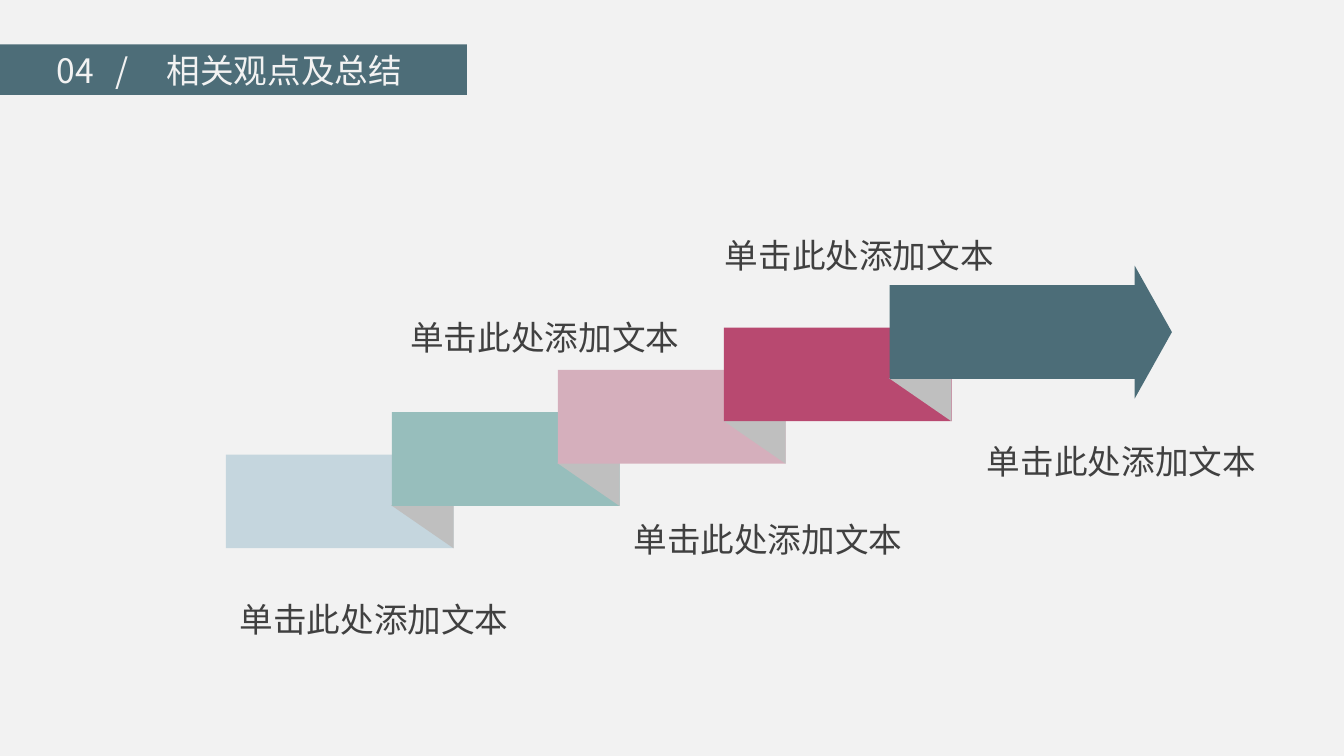
import pptx
import pptx.util
import pptx.dml.color
import pptx.enum.shapes
import pptx.enum.text
import pptx.oxml
import pptx.oxml.ns
from lxml import etree

THEME = {
    "background": "F2F2F2", "banner": "4D6D78", "text": "404040",
    "fold": "BFBFBF", "arrow": "4C6D78",
    "steps": ["C5D6DE", "97BEBC", "D5AFBC", "B84970"],
    "font": "Noto Sans CJK SC", "size": 24,
}
SHAPE = pptx.enum.shapes.MSO_SHAPE
qn = pptx.oxml.ns.qn

prs = pptx.Presentation()
prs.slide_width = pptx.util.Inches(13.33)
prs.slide_height = pptx.util.Inches(7.5)
COL, ROW = prs.slide_width / 100, prs.slide_height / 100  # 100 by 100 grid
s = prs.slides.add_slide(prs.slide_layouts[6])
s.background.fill.solid()
s.background.fill.fore_color.rgb = pptx.dml.color.RGBColor.from_string(THEME["background"])


def paint(sp, color):
    sp.shadow.inherit = False
    sp.fill.solid()
    sp.fill.fore_color.rgb = pptx.dml.color.RGBColor.from_string(color)
    sp.line.fill.background()


def write(sp, text, color):
    tf = sp.text_frame
    tf.vertical_anchor = pptx.enum.text.MSO_ANCHOR.MIDDLE
    p = tf.paragraphs[0]
    p.text = text
    p.alignment = pptx.enum.text.PP_ALIGN.LEFT
    p.font.size = pptx.util.Pt(THEME["size"])
    p.font.name = THEME["font"]
    p.font.color.rgb = pptx.dml.color.RGBColor.from_string(color)
    # East Asian glyphs take the same font
    east = etree.SubElement(p._p.pPr.find(qn("a:defRPr")), qn("a:ea"))
    east.set("typeface", THEME["font"])
    return p


# Staircase of folded ribbons, each one column step right and one row step up
LEFT, TOP, STEP_X, STEP_Y = 16.8, 60.13, 12.35, 5.6
WIDTH, HEIGHT, FOLD_W, FOLD_H = 16.95, 12.4, 4.65, 5.7
for i, color in enumerate(THEME["steps"]):
    x, y = LEFT + i * STEP_X, TOP - i * STEP_Y
    ribbon = s.shapes.add_shape(SHAPE.RECTANGLE, int(x * COL), int(y * ROW),
                                int(WIDTH * COL), int(HEIGHT * ROW))
    paint(ribbon, color)
    right, bottom = x + WIDTH, y + HEIGHT
    fb = s.shapes.build_freeform(int((right - FOLD_W) * COL), int((bottom - FOLD_H) * ROW))
    fb.add_line_segments([(int(right * COL), int((bottom - FOLD_H) * ROW)),
                          (int(right * COL), int(bottom * ROW))], close=True)
    paint(fb.convert_to_shape(), THEME["fold"])

# Arrow that ends the staircase, its shaft as high as a ribbon
ARROW_H = 17.6
steps = len(THEME["steps"])
arrow = s.shapes.add_shape(
    SHAPE.RIGHT_ARROW, int((LEFT + steps * STEP_X) * COL),
    int((TOP - steps * STEP_Y - (ARROW_H - HEIGHT) / 2) * ROW), int(21 * COL), int(ARROW_H * ROW))
arrow.adjustments[0] = HEIGHT / ARROW_H
arrow.adjustments[1] = 0.28
paint(arrow, THEME["arrow"])

# Labels around the staircase
for x, y in [(17.1, 78.5), (46.4, 68), (72.7, 57.6), (53.2, 30.4), (29.8, 41.2)]:
    label = s.shapes.add_textbox(int(x * COL), int(y * ROW), int(21.5 * COL), int(6.7 * ROW))
    label.text_frame.word_wrap = False
    write(label, "单击此处添加文本", THEME["text"])

# Title banner, with tab stops between number, slash and title
banner = s.shapes.add_shape(SHAPE.RECTANGLE, 0, int(5.87 * ROW), int(34.75 * COL), int(6.7 * ROW))
paint(banner, THEME["banner"])
banner.text_frame.margin_left = int(4.2 * COL)
p = write(banner, "04\t/\t相关观点及总结", THEME["background"])
tabs = etree.Element(qn("a:tabLst"))
for stop in (4.4, 8.2):
    etree.SubElement(tabs, qn("a:tab"), pos=str(int(stop * COL)), algn="l")
p._p.pPr.insert(0, tabs)

prs.save("out.pptx")
